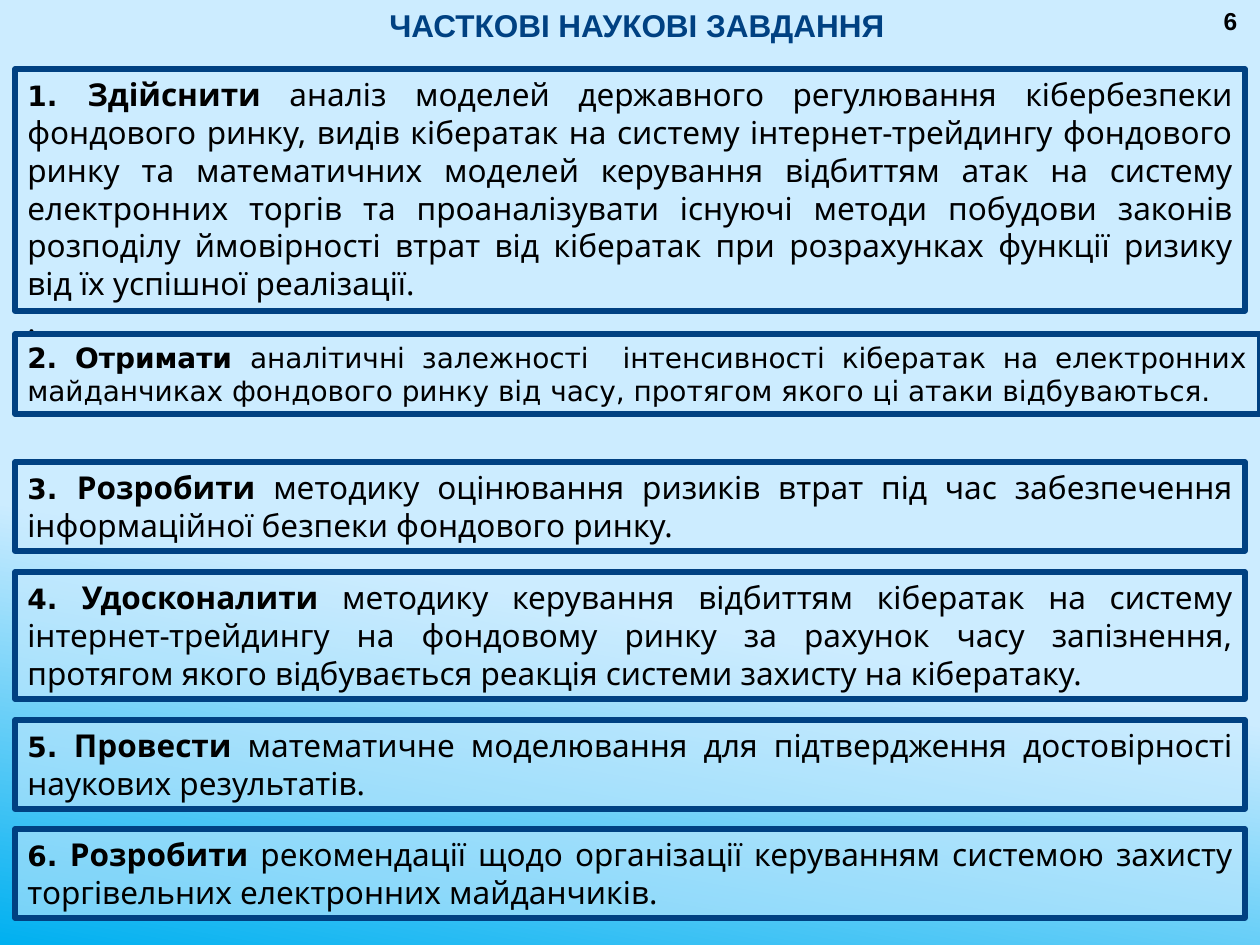
from lxml import etree
from pptx import Presentation, util as u
from pptx.dml.color import RGBColor
from pptx.enum import shapes, text
from pptx.oxml.ns import qn

PX = 914400 / 126
COLORS = {"navy": "004182", "ice": "CCECFF", "sky": "00B0F0", "black": "000000"}
NUMBER = dict(name="DejaVu Sans", size=u.Pt(16), bold=True)
GAP = dict(NUMBER, size=u.Pt(14))
VERB = dict(name="Noto Sans", size=u.Pt(18), bold=True)
BODY = dict(VERB, bold=False)
PLAIN = dict(NUMBER, bold=False)
TASKS = [
    (69, 1230, 242, 68, [[("1. ", NUMBER), ("Здійснити ", VERB), (
        "аналіз моделей державного регулювання кібербезпеки фондового ринку, "
        "видів кібератак на систему інтернет-трейдингу фондового ринку та "
        "математичних моделей керування відбиттям атак на систему електронних "
        "торгів та проаналізувати існуючі методи побудови законів розподілу "
        "ймовірності втрат від кібератак при розрахунках функції ризику від їх "
        "успішної реалізації.", BODY)], [(".", BODY)]]),
    (334, 1245, 80, 54, [[("2. Отримати ", NUMBER), (
        "аналітичні залежності  інтенсивності кібератак на електронних "
        "майданчиках фондового ринку від часу, протягом якого ці атаки "
        "відбуваються. ", PLAIN)]]),
    (462, 1230, 89, 56, [[("3. ", NUMBER), ("Розробити ", VERB), (
        "методику оцінювання ризиків втрат під час забезпечення "
        "інформаційної безпеки фондового ринку.", BODY)]]),
    (572, 1230, 127, 56, [[("4.", NUMBER), (" ", GAP), ("Удосконалити", VERB), (
        " методику керування відбиттям кібератак на систему "
        "інтернет-трейдингу на фондовому ринку за рахунок часу запізнення, "
        "протягом якого відбувається реакція системи захисту на кібератаку.", BODY)]]),
    (720, 1230, 89, 56, [[("5.", NUMBER), (" ", GAP), ("Провести", VERB), (
        " математичне моделювання для підтвердження достовірності "
        "наукових результатів.", BODY)]]),
    (829, 1230, 89, 56, [[("6.", NUMBER), (" ", GAP), ("Розробити", VERB), (
        " рекомендації щодо організації керуванням системою захисту "
        "торгівельних електронних майданчиків.", BODY)]]),
]


def px(*lengths):
    """Turn pixel lengths into EMU."""
    return [round(n * PX) for n in lengths]


def rgb(color):
    """Look up a named colour."""
    return RGBColor.from_string(COLORS[color])


def write(sp, paragraphs, align, color="black"):
    """Fill a shape with paragraphs of formatted runs."""
    tf = sp.text_frame
    tf.word_wrap = True
    tf.vertical_anchor = text.MSO_ANCHOR.TOP
    for i, runs in enumerate(paragraphs):
        p = tf.paragraphs[0] if i == 0 else tf.add_paragraph()
        p.alignment = align
        for words, fmt in runs:
            r = p.add_run()
            r.text = words
            r.font.color.rgb = rgb(color)
            for key, value in fmt.items():
                setattr(r.font, key, value)


def add_label(s, box, words, size, color):
    """Add a centred bold text box."""
    sp = s.shapes.add_textbox(*px(*box))
    fmt = dict(name="Arial", size=u.Pt(size), bold=True)
    write(sp, [[(words, fmt)]], text.PP_ALIGN.CENTER, color)


def add_task(s, top, width, height, opacity, paragraphs):
    """Add a framed translucent box with a justified task."""
    sp = s.shapes.add_shape(shapes.MSO_SHAPE.RECTANGLE, *px(15, top, width, height))
    sp.shadow.inherit = False
    sp.fill.solid()
    sp.fill.fore_color.rgb = rgb("ice")
    clr = sp.fill._xPr.find(qn("a:solidFill"))[0]
    etree.SubElement(clr, qn("a:alpha")).set("val", str(opacity * 1000))
    sp.line.color.rgb = rgb("navy")
    sp.line.width = u.Pt(3)
    write(sp, paragraphs, text.PP_ALIGN.JUSTIFY)


def set_background(s):
    """Give the slide a gradient rising from the lower left."""
    fill = s.background.fill
    fill.gradient()
    fill.gradient_angle = 80
    for stop, position, color in zip(fill.gradient_stops, (0, 0.38), ("sky", "ice")):
        stop.position = position
        stop.color.rgb = rgb(color)


def main():
    """Build and save the slide."""
    prs = Presentation()
    prs.slide_width, prs.slide_height = px(1260, 945)
    s = prs.slides.add_slide(prs.slide_layouts[6])
    set_background(s)
    add_label(s, (136, 0, 1002, 50), "ЧАСТКОВІ НАУКОВІ ЗАВДАННЯ", 18, "navy")
    add_label(s, (1201, 0, 59, 42), "6", 14, "black")
    for task in TASKS:
        add_task(s, *task)
    prs.save("out.pptx")


if __name__ == "__main__":
    main()
